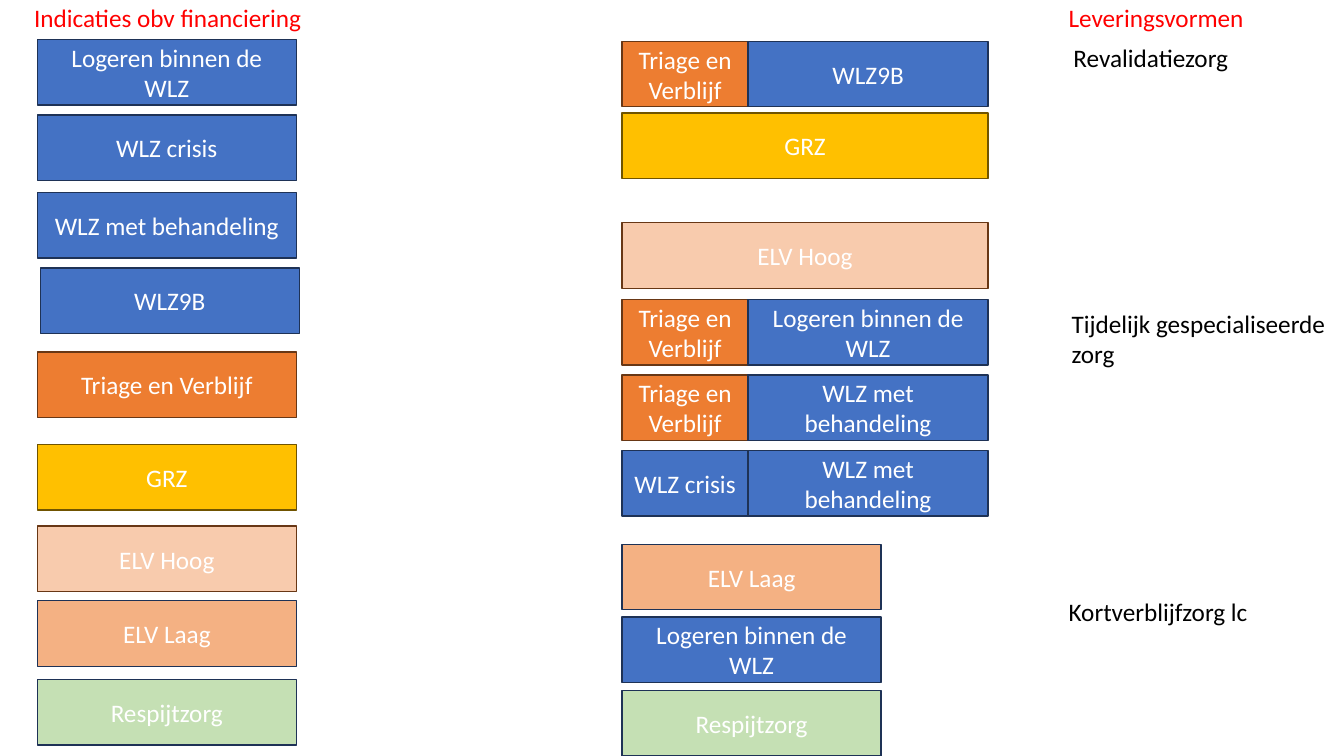
from pptx import Presentation
from pptx.dml.color import RGBColor
from pptx.enum.shapes import MSO_SHAPE
from pptx.enum.text import MSO_ANCHOR, MSO_AUTO_SIZE, PP_ALIGN
from pptx.util import Inches, Pt

RECTANGLE = MSO_SHAPE.RECTANGLE
MIDDLE = MSO_ANCHOR.MIDDLE
GROW = MSO_AUTO_SIZE.SHAPE_TO_FIT_TEXT
LEFT, CENTER, RIGHT = PP_ALIGN.LEFT, PP_ALIGN.CENTER, PP_ALIGN.RIGHT

WHITE, BLACK, RED = "FFFFFF", "000000", "FF0000"
BLUE, NAVY, BROWN = "4472C4", "1E3256", "683715"
BLOCK_HEIGHT = 0.65
INDICATION_LEFT, DELIVERY_LEFT = 0.37, 6.17
FULL, WIDE, NARROW = 2.57, 3.63, 1.25

CARE_COLORS = {
    "Logeren binnen de WLZ": (BLUE, NAVY),
    "WLZ crisis": (BLUE, NAVY),
    "WLZ met behandeling": (BLUE, NAVY),
    "WLZ9B": (BLUE, NAVY),
    "Triage en Verblijf": ("ED7D31", BROWN),
    "GRZ": ("FFC000", "705400"),
    "ELV Hoog": ("F8CBAD", BROWN),
    "ELV Laag": ("F4B183", NAVY),
    "Respijtzorg": ("C5E0B4", NAVY),
}

INDICATIONS = [
    ("Logeren binnen de WLZ", INDICATION_LEFT, 0.39),
    ("WLZ crisis", INDICATION_LEFT, 1.14),
    ("WLZ met behandeling", INDICATION_LEFT, 1.91),
    ("WLZ9B", 0.4, 2.66),
    ("Triage en Verblijf", INDICATION_LEFT, 3.49),
    ("GRZ", INDICATION_LEFT, 4.41),
    ("ELV Hoog", INDICATION_LEFT, 5.22),
    ("ELV Laag", INDICATION_LEFT, 5.96),
    ("Respijtzorg", INDICATION_LEFT, 6.74),
]

DELIVERIES = [
    (0.41, WIDE, ["Triage en Verblijf", "WLZ9B"]),
    (1.12, WIDE, ["GRZ"]),
    (2.21, WIDE, ["ELV Hoog"]),
    (2.97, WIDE, ["Triage en Verblijf", "Logeren binnen de WLZ"]),
    (3.72, WIDE, ["Triage en Verblijf", "WLZ met behandeling"]),
    (4.47, WIDE, ["WLZ crisis", "WLZ met behandeling"]),
    (5.4, FULL, ["ELV Laag"]),
    (6.12, FULL, ["Logeren binnen de WLZ"]),
    (6.85, FULL, ["Respijtzorg"]),
]

LABELS = [
    ("Tijdelijk gespecialiseerde zorg", (10.53, 3.01, 2.83, 0.71), BLACK, LEFT, True),
    ("Revalidatiezorg", (10.32, 0.37, 1.96, 0.4), BLACK, RIGHT, True),
    ("Kortverblijfzorg lc", (10.5, 5.87, 2.28, 0.4), BLACK, LEFT, True),
    ("Indicaties obv financiering", (0.24, -0.03, 2.89, 0.4), RED, LEFT, False),
    ("Leveringsvormen", (10.5, -0.03, 1.96, 0.4), RED, LEFT, False),
]


def color(target, value):
    target.rgb = RGBColor.from_string(value)


def write(box, text, text_color, align, frame_format):
    frame = box.text_frame
    for name, value in frame_format.items():
        setattr(frame, name, value)
    para = frame.paragraphs[0]
    para.alignment = align
    span = para.add_run()
    span.text = text
    for name, value in {"name": "Calibri", "size": Pt(18)}.items():
        setattr(span.font, name, value)
    color(span.font.color, text_color)


def add_block(page, care, left, top, width):
    area = map(Inches, (left, top, width, BLOCK_HEIGHT))
    box = page.shapes.add_shape(RECTANGLE, *area)
    box.shadow.inherit = False
    fill, line = CARE_COLORS[care]
    box.fill.solid()
    color(box.fill.fore_color, fill)
    color(box.line.color, line)
    box.line.width = Pt(1)
    write(box, care, WHITE, CENTER, {"vertical_anchor": MIDDLE, "word_wrap": True})


def add_delivery(page, top, width, cares):
    if len(cares) == 1:
        add_block(page, cares[0], DELIVERY_LEFT, top, width)
    else:
        first, second = cares
        add_block(page, first, DELIVERY_LEFT, top, NARROW)
        add_block(page, second, DELIVERY_LEFT + NARROW, top, width - NARROW)


def add_label(page, text, area, text_color, align, wrap):
    box = page.shapes.add_textbox(*map(Inches, area))
    write(box, text, text_color, align, {"word_wrap": wrap, "auto_size": GROW})


def main():
    deck = Presentation()
    deck.slide_width, deck.slide_height = Inches(13.33), Inches(7.5)
    page = deck.slides.add_slide(deck.slide_layouts.get_by_name("Blank"))
    for care, left, top in INDICATIONS:
        add_block(page, care, left, top, FULL)
    for delivery in DELIVERIES:
        add_delivery(page, *delivery)
    for label in LABELS:
        add_label(page, *label)
    deck.save("out.pptx")


if __name__ == "__main__":
    main()
